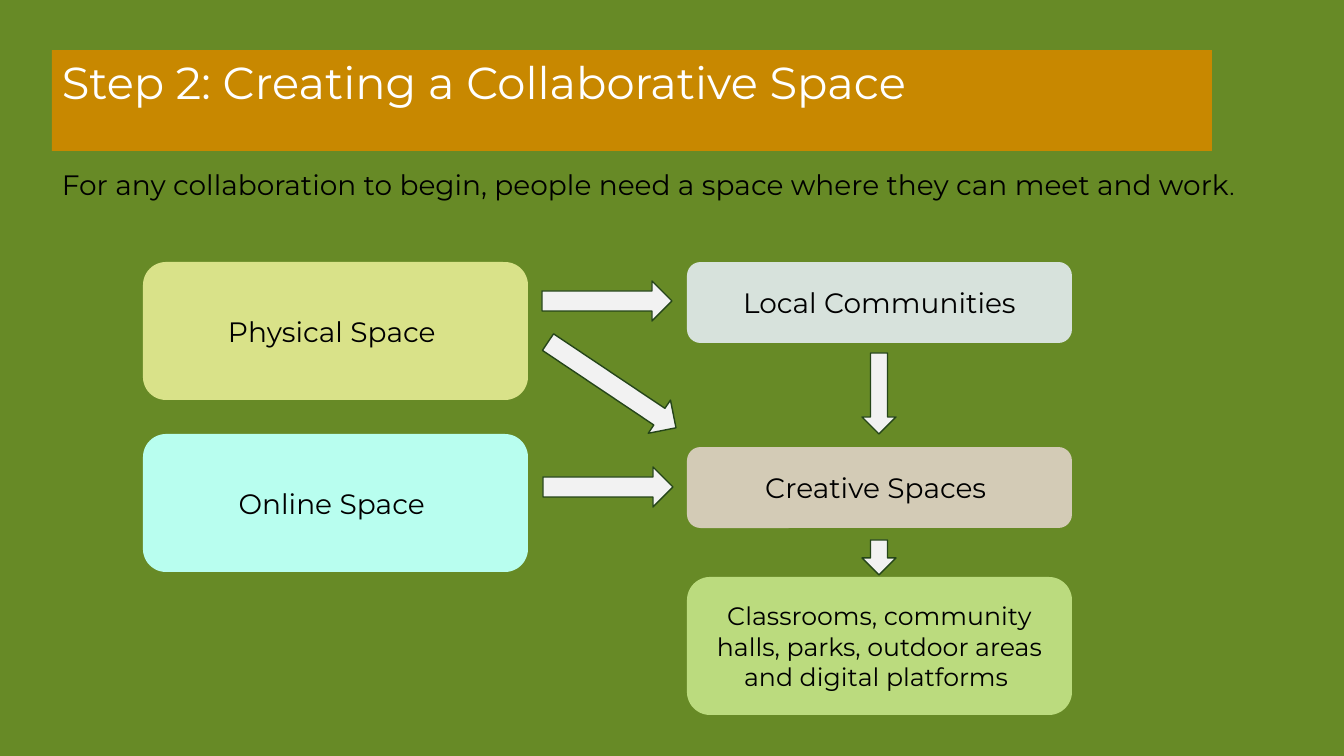
from pptx import Presentation
from pptx.dml.color import RGBColor
from pptx.enum.shapes import MSO_SHAPE
from pptx.enum.text import MSO_ANCHOR, PP_ALIGN
from pptx.util import Pt

EMU_PER_PX = 914400 / 100.8
FONT = "Montserrat"
LEFT_COL, RIGHT_COL, BOX_W = 143, 687, 385
TALL, SHORT = 138, 81
ARROW_W = 34
DOWN_X = RIGHT_COL + (BOX_W - ARROW_W) // 2

BOXES = [
    ("Physical Space ", LEFT_COL, 262, TALL, "D9E289", 20),
    ("Online Space ", LEFT_COL, 434, TALL, "B8FEEF", 20),
    ("Local Communities", RIGHT_COL, 262, SHORT, "D7E2DC", 20),
    ("Creative Spaces ", RIGHT_COL, 447, SHORT, "D3CBB6", 20),
    ("Classrooms, community halls, parks, outdoor areas and digital platforms ",
     RIGHT_COL, 577, TALL, "BBDB7E", 18),
]
ARROWS = [
    (MSO_SHAPE.RIGHT_ARROW, (542, 281, 130, 40), 0),
    (MSO_SHAPE.RIGHT_ARROW, (543, 467, 130, 40), 0),
    (MSO_SHAPE.RIGHT_ARROW, (535, 365, 154, 40), 33.8),
    (MSO_SHAPE.DOWN_ARROW, (DOWN_X, 353, ARROW_W, 81), 0),
    (MSO_SHAPE.DOWN_ARROW, (DOWN_X, 540, ARROW_W, 35), 0),
]


def px(*lengths):
    """Turn pixel lengths into EMU."""
    return [round(n * EMU_PER_PX) for n in lengths]


def color(hex_code):
    """Turn a hex string into a colour."""
    return RGBColor.from_string(hex_code)


def add_run(p, text, size, hex_code):
    """Append a formatted run to a paragraph."""
    r = p.add_run()
    r.text = text
    for name, value in {"name": FONT, "size": Pt(size)}.items():
        setattr(r.font, name, value)
    r.font.color.rgb = color(hex_code)


def set_text(s, runs, hex_code, anchor, align):
    """Fill a shape with one wrapped paragraph of (text, size) runs."""
    tf = s.text_frame
    for name, value in {"word_wrap": True, "vertical_anchor": anchor}.items():
        setattr(tf, name, value)
    p = tf.paragraphs[0]
    p.alignment = align
    for text, size in runs:
        add_run(p, text, size, hex_code)


def add_filled(slide, kind, box, fill, line=None):
    """Add a flat preset shape, outlined only if a line colour is given."""
    s = slide.shapes.add_shape(kind, *px(*box))
    s.shadow.inherit = False
    s.fill.solid()
    s.fill.fore_color.rgb = color(fill)
    if line:
        s.line.color.rgb = color(line)
        s.line.width = Pt(1)
    else:
        s.line.fill.background()
    return s


def add_title(slide, text):
    """Add the title banner."""
    s = add_filled(slide, MSO_SHAPE.RECTANGLE, (52, 50, 1160, 101), "C88800")
    set_text(s, [(text, 32)], "FFFFFF", MSO_ANCHOR.TOP, PP_ALIGN.LEFT)


def add_intro(slide, runs):
    """Add the sentence under the title."""
    s = slide.shapes.add_textbox(*px(52, 163, 1202, 44))
    set_text(s, runs, "000000", MSO_ANCHOR.TOP, PP_ALIGN.LEFT)


def add_box(slide, text, left, top, height, fill, size):
    """Add a rounded box with a centred label."""
    s = add_filled(slide, MSO_SHAPE.ROUNDED_RECTANGLE, (left, top, BOX_W, height), fill)
    set_text(s, [(text, size)], "000000", MSO_ANCHOR.MIDDLE, PP_ALIGN.CENTER)


def add_arrow(slide, kind, box, rotation):
    """Add an outlined block arrow."""
    s = add_filled(slide, kind, box, "F2F2F2", "254519")
    s.rotation = rotation


def main():
    """Build and save the slide."""
    prs = Presentation()
    prs.slide_width, prs.slide_height = px(1344, 756)
    slide = prs.slides.add_slide(prs.slide_layouts[6])
    slide.background.fill.solid()
    slide.background.fill.fore_color.rgb = color("678A26")
    add_title(slide, "Step 2: Creating a Collaborative Space")
    add_intro(slide, [
        ("For any collaboration to begin, people need a space where they can meet and work", 20),
        (".", 16),
    ])
    for box in BOXES:
        add_box(slide, *box)
    for arrow in ARROWS:
        add_arrow(slide, *arrow)
    prs.save("out.pptx")


if __name__ == "__main__":
    main()
